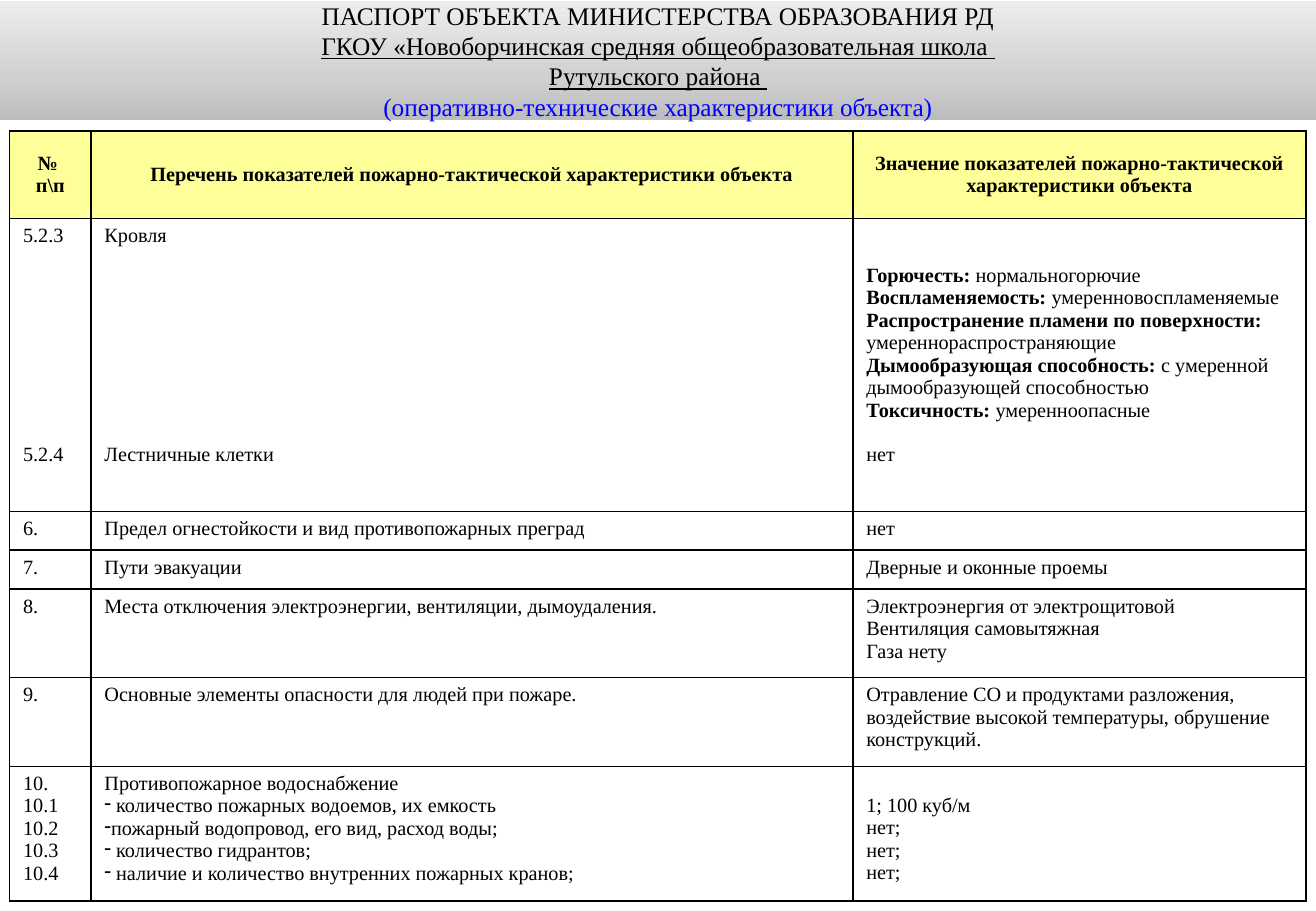
from copy import deepcopy
from dataclasses import dataclass

from pptx import Presentation
from pptx import util as u
from pptx.dml.color import RGBColor
from pptx.enum import text
from pptx.oxml import parse_xml
from pptx.oxml.ns import nsdecls, qn

# Content: a cell is a list of paragraphs; a tuple is (bold part, plain part)
TITLE = [
    "ПАСПОРТ ОБЪЕКТА МИНИСТЕРСТВА ОБРАЗОВАНИЯ РД",
    "ГКОУ «Новоборчинская средняя общеобразовательная школа ",
    "Рутульского района ",
    "(оперативно-технические характеристики объекта)",
]
UNDERLINED, COLOURED = (1, 2), 3

HEADER = [
    ["№ ", "п\\п"],
    ["Перечень показателей пожарно-тактической характеристики объекта"],
    ["Значение показателей пожарно-тактической характеристики объекта"],
]
ROWS = [
    [["5.2.3", "5.2.4"],
     ["Кровля", "Лестничные клетки"],
     [("Горючесть: ", "нормальногорючие"),
      ("Воспламеняемость: ", "умеренновоспламеняемые"),
      ("Распространение пламени по поверхности:", ""),
      "умереннораспространяющие",
      ("Дымообразующая способность: ", "с умеренной дымообразующей способностью"),
      ("Токсичность: ", "умеренноопасные"),
      "нет"]],
    [["6."], ["Предел огнестойкости и вид противопожарных преград"], ["нет"]],
    [["7."], ["Пути эвакуации"], ["Дверные и оконные проемы"]],
    [["8."],
     ["Места отключения электроэнергии, вентиляции, дымоудаления."],
     ["Электроэнергия от электрощитовой", "Вентиляция самовытяжная", "Газа нету"]],
    [["9."],
     ["Основные элементы опасности для людей при пожаре."],
     ["Отравление СО и продуктами разложения, воздействие высокой температуры, "
      "обрушение конструкций."]],
    [["10.", "10.1", "10.2", "10.3", "10.4"],
     ["Противопожарное водоснабжение",
      " количество пожарных водоемов, их емкость",
      "пожарный водопровод, его вид, расход воды;",
      " количество гидрантов;",
      " наличие и количество внутренних пожарных кранов;"],
     ["1; 100 куб/м", "нет;", "нет;", "нет;"]],
]
ROOF, WATER = 1, len(ROWS)  # table rows with special spacing

# Sizes in px, 100 px to the inch
PX = 9144
PAGE = (1083, 750)
BAND = (0, 1, 1083, 98)
TABLE_AT = (8, 108)
COLUMNS = [67, 627, 373]
HEIGHTS = [72, 241, 32, 32, 73, 73, 111]
PAD_X, PAD_Y, LINE = 11, 5, 18
ROOF_GAPS = {0: 9, 1: 9, 2: 1}  # lines left free above the last paragraph


@dataclass(frozen=True)
class Theme:
    font: str = "Times New Roman"
    title_size: float = 15
    cell_size: float = 12
    ink: str = "000000"
    accent: str = "0000FF"
    header: str = "FFFF99"
    cell: str = "FFFFFF"
    band: tuple = ((0, "BCBCBC"), (0.35, "D0D0D0"), (1, "EDEDED"))


THEME = Theme()


def px(value):
    return u.Emu(value * PX)


def style(para, size, colour=THEME.ink, bold=False):
    font = para.font
    font.name, font.size, font.bold = THEME.font, u.Pt(size), bold
    font.color.rgb = RGBColor.from_string(colour)


def add_band(page):
    band = page.shapes.title
    band.left, band.top, band.width, band.height = map(px, BAND)
    band.fill.gradient()
    band.fill.gradient_angle = 90
    stops = band._element.spPr.find(qn("a:gradFill")).find(qn("a:gsLst"))
    stops.append(deepcopy(stops[0]))
    for stop, (position, colour) in zip(band.fill.gradient_stops, THEME.band):
        stop.position = position
        stop.color.rgb = RGBColor.from_string(colour)

    frame = band.text_frame
    frame.auto_size = text.MSO_AUTO_SIZE.NONE
    frame.vertical_anchor = text.MSO_ANCHOR.MIDDLE
    frame.text = "\n".join(TITLE)
    for i, para in enumerate(frame.paragraphs):
        style(para, THEME.title_size, THEME.accent if i == COLOURED else THEME.ink)
        para.alignment = text.PP_ALIGN.CENTER
        para.font.underline = i in UNDERLINED


def add_borders(cell):
    properties = cell._tc.get_or_add_tcPr()
    for i, side in enumerate(("lnL", "lnR", "lnT", "lnB")):
        properties.insert(i, parse_xml(
            f'<a:{side} {nsdecls("a")} w="12700"><a:solidFill>'
            f'<a:srgbClr val="{THEME.ink}"/></a:solidFill></a:{side}>'))


def add_dash(para):
    properties = para._p.get_or_add_pPr()
    properties.set("marL", "0")
    properties.set("indent", "0")
    bullet = parse_xml(f'<a:buChar {nsdecls("a")} char="-"/>')
    properties.find(qn("a:defRPr")).addprevious(bullet)


def fill_cell(cell, lines, is_header):
    cell.fill.solid()
    cell.fill.fore_color.rgb = RGBColor.from_string(
        THEME.header if is_header else THEME.cell)
    cell.margin_left = cell.margin_right = px(PAD_X)
    cell.margin_top = cell.margin_bottom = px(PAD_Y)
    add_borders(cell)
    if is_header:
        cell.vertical_anchor = text.MSO_ANCHOR.MIDDLE
    frame = cell.text_frame
    for i, line in enumerate(lines):
        para = frame.add_paragraph() if i else frame.paragraphs[0]
        style(para, THEME.cell_size, bold=is_header)
        if is_header:
            para.alignment = text.PP_ALIGN.CENTER
        label, value = line if isinstance(line, tuple) else ("", line)
        if label:
            span = para.add_run()
            span.text, span.font.bold = label, True
        if value:
            para.add_run().text = value


def add_passport(page):
    frame = page.shapes.add_table(
        len(HEIGHTS), len(COLUMNS), *map(px, TABLE_AT),
        px(sum(COLUMNS)), px(sum(HEIGHTS)))
    table = frame.table
    for column, width in zip(table.columns, COLUMNS):
        column.width = px(width)
    for row, height in zip(table.rows, HEIGHTS):
        row.height = px(height)
    for r, row in enumerate([HEADER] + ROWS):
        for c, lines in enumerate(row):
            fill_cell(table.cell(r, c), lines, r == 0)

    # Free lines above the last roof entries, dashes and offset for water supply
    for c, gap in ROOF_GAPS.items():
        table.cell(ROOF, c).text_frame.paragraphs[-1].space_before = px(gap * LINE)
    table.cell(ROOF, 2).vertical_anchor = text.MSO_ANCHOR.MIDDLE
    for para in table.cell(WATER, 1).text_frame.paragraphs[1:]:
        add_dash(para)
    table.cell(WATER, 2).margin_top = px(PAD_Y + LINE)


def main():
    deck = Presentation()
    deck.slide_width, deck.slide_height = map(px, PAGE)
    page = deck.slides.add_slide(deck.slide_layouts[5])
    add_band(page)
    add_passport(page)
    deck.save("out.pptx")


if __name__ == "__main__":
    main()
